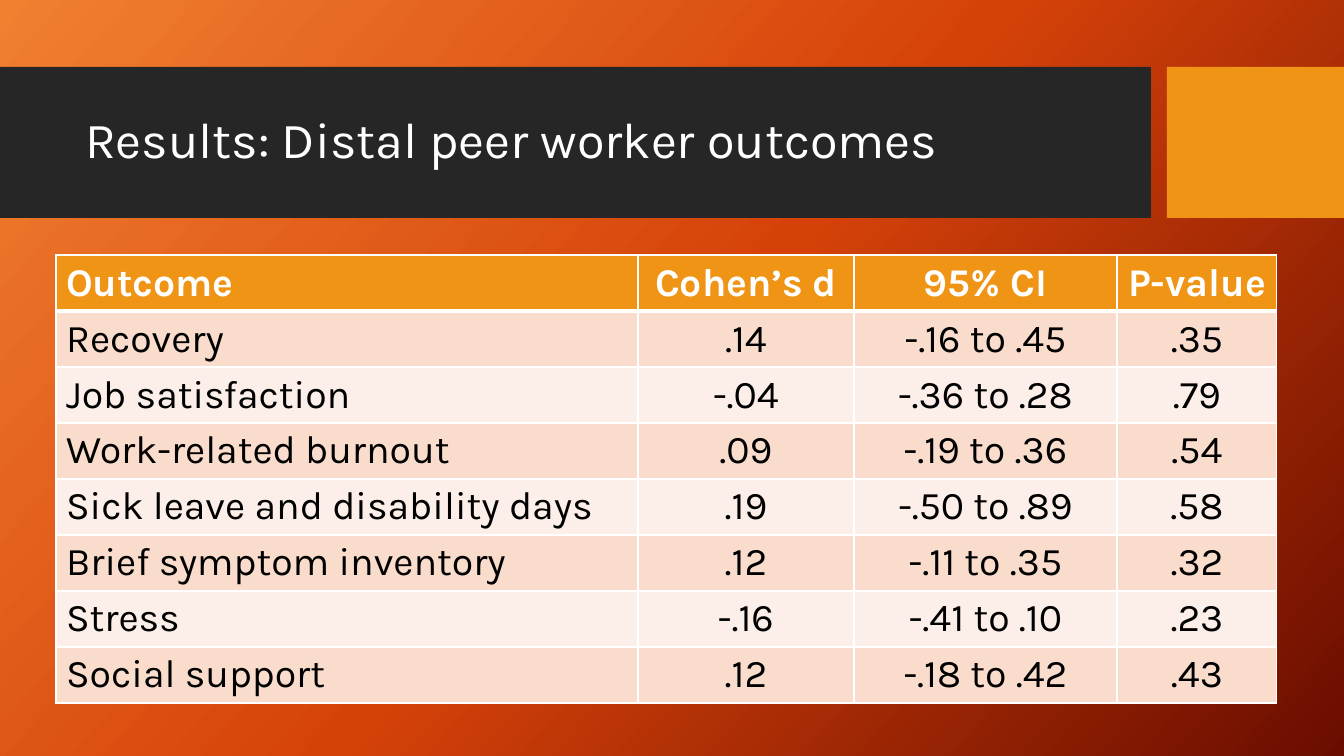
"""Build the slide with the table of distal peer worker outcomes."""
import pptx
import pptx.util
import pptx.dml.color
import pptx.enum.shapes
import pptx.enum.text
import pptx.oxml
import pptx.oxml.ns

PX = 914400 / 100.8
FONT = "Karla"
HEX = {
    "white": "FFFFFF", "black": "000000", "dark": "262626", "gold": "F09415",
    "peach": "F9DCCC", "pale": "FCEEE8",
    "left": "F18031", "mid": "D54209", "right": "6A0D00",
}
ROWS = [
    ("Outcome", "Cohen’s d", "95% CI", "P-value"),
    ("Recovery", ".14", "-.16 to .45", ".35"),
    ("Job satisfaction", "-.04", "-.36 to .28", ".79"),
    ("Work-related burnout", ".09", "-.19 to .36", ".54"),
    ("Sick leave and disability days", ".19", "-.50 to .89", ".58"),
    ("Brief symptom inventory", ".12", "-.11 to .35", ".32"),
    ("Stress", "-.16", "-.41 to .10", ".23"),
    ("Social support", ".12", "-.18 to .42", ".43"),
]
WIDTHS = [582, 216, 263, 160]
HIGH = 56
ALIGN = pptx.enum.text.PP_ALIGN
ANCHOR = pptx.enum.text.MSO_ANCHOR
NS = pptx.oxml.ns.nsdecls("a")


def px(*nums):
    return [pptx.util.Emu(round(n * PX)) for n in nums]


def write(para, text, size, tint, bold=False):
    run = para.add_run()
    run.text = text
    run.font.name = FONT
    run.font.size = pptx.util.Pt(size)
    run.font.bold = bold
    run.font.color.rgb = pptx.dml.color.RGBColor.from_string(HEX[tint])


deck = pptx.Presentation()
deck.slide_width, deck.slide_height = px(1344, 756)
slide = deck.slides.add_slide(deck.slide_layouts[5])

back = slide.background.fill
back.gradient()
back.gradient_angle = 360 - 42
stops = slide.element.find(".//" + pptx.oxml.ns.qn("a:gsLst"))
for stop in list(stops):
    stops.remove(stop)
for pos, tint in ((0, "left"), (50, "mid"), (100, "right")):
    stops.append(pptx.oxml.parse_xml(
        f'<a:gs {NS} pos="{pos * 1000}"><a:srgbClr val="{HEX[tint]}"/></a:gs>'))

for left, wide, tint in ((0, 1151, "dark"), (1167, 177, "gold")):
    bar = slide.shapes.add_shape(
        pptx.enum.shapes.MSO_SHAPE.RECTANGLE, *px(left, 67, wide, 151))
    bar.shadow.inherit = False
    bar.fill.solid()
    bar.fill.fore_color.rgb = pptx.dml.color.RGBColor.from_string(HEX[tint])
    bar.line.fill.background()

title = slide.shapes.title
title.left, title.top, title.width, title.height = px(75, 83, 1059, 119)
frame = title.text_frame
frame.word_wrap = True
frame.auto_size = pptx.enum.text.MSO_AUTO_SIZE.NONE
frame.vertical_anchor = ANCHOR.MIDDLE
para = frame.paragraphs[0]
para.alignment = ALIGN.LEFT
para.line_spacing = 0.9
write(para, "Results: Distal peer worker outcomes", 36, "white")
slide.shapes.element.append(title.element)

table = slide.shapes.add_table(
    len(ROWS), len(WIDTHS),
    *px(56, 255, sum(WIDTHS), HIGH * len(ROWS))).table
for col, wide in zip(table.columns, px(*WIDTHS)):
    col.width = wide
for r, texts in enumerate(ROWS):
    head = r == 0
    table.rows[r].height = px(HIGH)[0]
    fill = "gold" if head else "peach" if r % 2 else "pale"
    edges = {"L": 1, "R": 1, "T": 3 if r == 1 else 1, "B": 3 if head else 1}
    for c, text in enumerate(texts):
        cell = table.cell(r, c)
        props = cell._tc.get_or_add_tcPr()
        for side, thick in edges.items():
            props.append(pptx.oxml.parse_xml(
                f'<a:ln{side} {NS} w="{thick * 12700}"><a:solidFill>'
                f'<a:srgbClr val="{HEX["white"]}"/></a:solidFill></a:ln{side}>'))
        cell.fill.solid()
        cell.fill.fore_color.rgb = pptx.dml.color.RGBColor.from_string(HEX[fill])
        para = cell.text_frame.paragraphs[0]
        para.alignment = ALIGN.CENTER if c else ALIGN.LEFT
        write(para, text, 28, "white" if head else "black", head)

deck.save("out.pptx")
